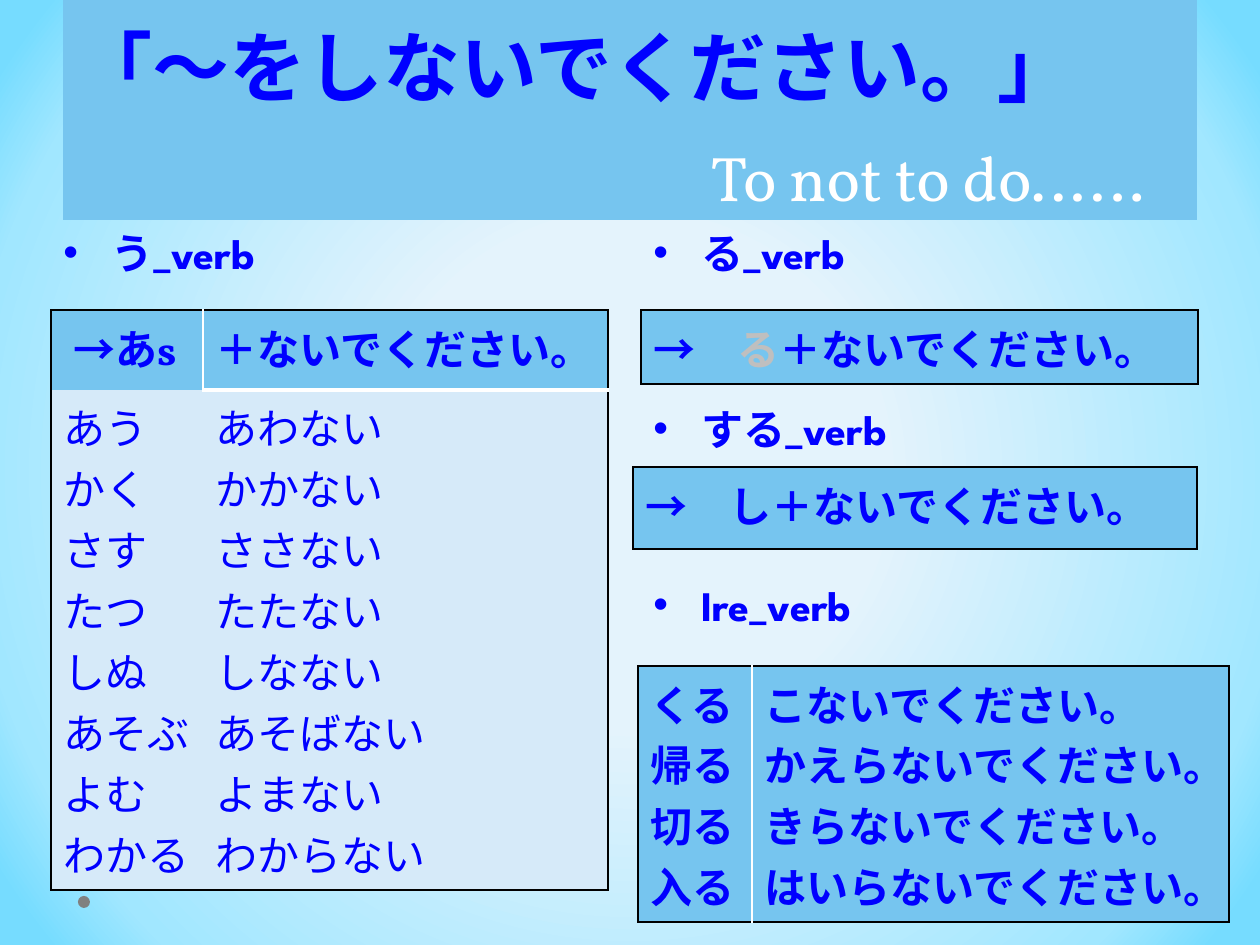
from dataclasses import dataclass, field

from lxml import etree
from pptx import Presentation, util as u
from pptx.dml.color import RGBColor
from pptx.enum import shapes, text
from pptx.oxml import parse_xml
from pptx.oxml.ns import nsdecls, qn

EMU_PER_PX = 914400 / 126
BODY_FONT, LABEL_FONT = "Vollkorn", "League Spartan"
NO_TABLE_STYLE = "{2D5ABB26-0587-4C30-8999-92F81FD0307C}"
COLORS = {
    "blue": "0000FF", "sky": "76C5EF", "pale": "D6EAF9", "white": "FFFFFF",
    "black": "000000", "faded": "BFBFBF", "dot": "808080",
}
GRADIENT = {32: "E4F3FC", 84: "A1E7FF", 95: "76DCFF"}


@dataclass
class Run:
    content: str
    color: str = "blue"
    bold: bool = True
    size: int = 24
    font: str = BODY_FONT


@dataclass
class Cell:
    lines: list[list[Run]]
    fill: str = "sky"
    borders: dict[str, tuple[str, int]] = field(default_factory=dict)


@dataclass
class Grid:
    left: int
    top: int
    columns: list[int]
    rows: list[int]
    cells: list[list[Cell]]


@dataclass
class Label:
    left: int
    top: int
    content: str


def px(length: int) -> u.Emu:
    return u.Emu(round(length * EMU_PER_PX))


def rgb(name: str) -> RGBColor:
    return RGBColor.from_string(COLORS[name])


def edges(left="black", right="black", top="black", bottom="black", bottom_width=1):
    colors = {"L": left, "R": right, "T": top, "B": bottom}
    return {side: (color, bottom_width if side == "B" else 1)
            for side, color in colors.items() if color}


def plain_lines(words: str, bold: bool = True) -> list[list[Run]]:
    return [[Run(word, bold=bold)] for word in words.split()]


def write_runs(paragraph, runs: list[Run]) -> None:
    for item in runs:
        run = paragraph.add_run()
        run.text = item.content
        formats = {"name": item.font, "size": u.Pt(item.size), "bold": item.bold}
        for name, value in formats.items():
            setattr(run.font, name, value)
        run.font.color.rgb = rgb(item.color)


def write_lines(frame, lines: list[list[Run]]) -> None:
    for index, runs in enumerate(lines):
        paragraph = frame.paragraphs[0] if index == 0 else frame.add_paragraph()
        write_runs(paragraph, runs)


def set_background(slide) -> None:
    stops = "".join(f'<a:gs pos="{position * 1000}"><a:srgbClr val="{color}"/></a:gs>'
                    for position, color in GRADIENT.items())
    slide.background.fill.solid()
    properties = slide.background._cSld.bg.bgPr
    properties.replace(properties[0], parse_xml(
        f'<a:gradFill {nsdecls("a")} rotWithShape="1"><a:gsLst>{stops}</a:gsLst>'
        '<a:path path="circle"><a:fillToRect l="50000" t="50000" r="50000" b="50000"/>'
        '</a:path></a:gradFill>'))


def draw_title(slide) -> None:
    title = slide.shapes.title
    placement = {"left": px(63), "top": px(0), "width": px(1134), "height": px(220)}
    for name, value in placement.items():
        setattr(title, name, value)
    title.fill.solid()
    title.fill.fore_color.rgb = rgb("sky")
    frame = title.text_frame
    formats = {"vertical_anchor": text.MSO_ANCHOR.BOTTOM, "word_wrap": True,
               "auto_size": text.MSO_AUTO_SIZE.NONE}
    for name, value in formats.items():
        setattr(frame, name, value)
    write_lines(frame, [[Run("「〜をしないでください。」", size=44)],
                        [Run("To not to do……", "white", False, 36)]])
    for paragraph in frame.paragraphs:
        paragraph.alignment = text.PP_ALIGN.LEFT
        paragraph.line_spacing = u.Pt(58)
    frame.paragraphs[1]._p.get_or_add_pPr().set("marL", str(px(635)))


def draw_label(slide, label: Label) -> None:
    box = slide.shapes.add_textbox(px(label.left), px(label.top), px(557), px(74))
    box.text_frame.word_wrap = True
    paragraph = box.text_frame.paragraphs[0]
    write_runs(paragraph, [Run(label.content, font=LABEL_FONT)])
    properties = paragraph._p.get_or_add_pPr()
    properties.set("marL", str(px(48)))
    properties.set("indent", str(px(-48)))
    color = etree.SubElement(properties, qn("a:buClr"))
    etree.SubElement(color, qn("a:srgbClr"), val=COLORS["blue"])
    etree.SubElement(properties, qn("a:buFont"), typeface="Arial")
    etree.SubElement(properties, qn("a:buChar"), char="•")


def draw_borders(cell, borders: dict[str, tuple[str, int]]) -> None:
    properties = cell._tc.get_or_add_tcPr()
    for index, (side, (color, width)) in enumerate(borders.items()):
        properties.insert(index, parse_xml(
            f'<a:ln{side} {nsdecls("a")} w="{u.Pt(width)}"><a:solidFill>'
            f'<a:srgbClr val="{COLORS[color]}"/></a:solidFill></a:ln{side}>'))


def draw_grid(slide, grid: Grid) -> None:
    frame = slide.shapes.add_table(
        len(grid.rows), len(grid.columns), px(grid.left), px(grid.top),
        px(sum(grid.columns)), px(sum(grid.rows)))
    table = frame.table
    table.first_row = table.horz_banding = False
    table._tbl.tblPr.find(qn("a:tableStyleId")).text = NO_TABLE_STYLE
    for column, width in zip(table.columns, grid.columns):
        column.width = px(width)
    for row, height, items in zip(table.rows, grid.rows, grid.cells):
        row.height = px(height)
        for cell, item in zip(row.cells, items):
            write_lines(cell.text_frame, item.lines)
            cell.fill.solid()
            cell.fill.fore_color.rgb = rgb(item.fill)
            draw_borders(cell, item.borders)


def draw_dot(slide) -> None:
    dot = slide.shapes.add_shape(shapes.MSO_SHAPE.OVAL, px(78), px(896), px(12), px(12))
    dot.shadow.inherit = False
    dot.fill.solid()
    dot.fill.fore_color.rgb = rgb("dot")
    dot.line.fill.background()


LABELS = [Label(51, 221, "う_verb")] + [
    Label(641, 221 + 176 * index, content)
    for index, content in enumerate(["る_verb", "する_verb", "Ire_verb"])]

GRIDS = [
    Grid(51, 310, [152, 405], [80, 500], [
        [Cell([[Run(" →あs")]], borders=edges(right="white", bottom=None)),
         Cell([[Run("＋ないでください。")]],
              borders=edges(left="white", bottom="white", bottom_width=3))],
        [Cell(plain_lines("あう かく さす たつ しぬ あそぶ よむ わかる", False), "pale",
              edges(right=None, top=None)),
         Cell(plain_lines("あわない かかない ささない たたない しなない "
                          "あそばない よまない わからない", False), "pale",
              edges(left=None, top="white"))]]),
    Grid(641, 310, [557], [74], [[Cell(
        [[Run("→　"), Run("る", "faded"), Run("＋ないでください。")]], borders=edges())]]),
    Grid(633, 467, [564], [82], [[Cell(
        [[Run("→　し＋ないでください。")]], borders=edges())]]),
    Grid(638, 666, [114, 477], [256], [[
        Cell(plain_lines("くる 帰る 切る 入る"), borders=edges(right="white")),
        Cell(plain_lines("こないでください。 かえらないでください。 "
                         "きらないでください。 はいらないでください。"),
             borders=edges(left="white"))]]),
]


def main() -> None:
    presentation = Presentation()
    presentation.slide_width, presentation.slide_height = px(1260), px(945)
    slide = presentation.slides.add_slide(presentation.slide_layouts[5])
    set_background(slide)
    draw_dot(slide)
    draw_title(slide)
    for label in LABELS:
        draw_label(slide, label)
    for grid in GRIDS:
        draw_grid(slide, grid)
    presentation.save("out.pptx")


if __name__ == "__main__":
    main()
